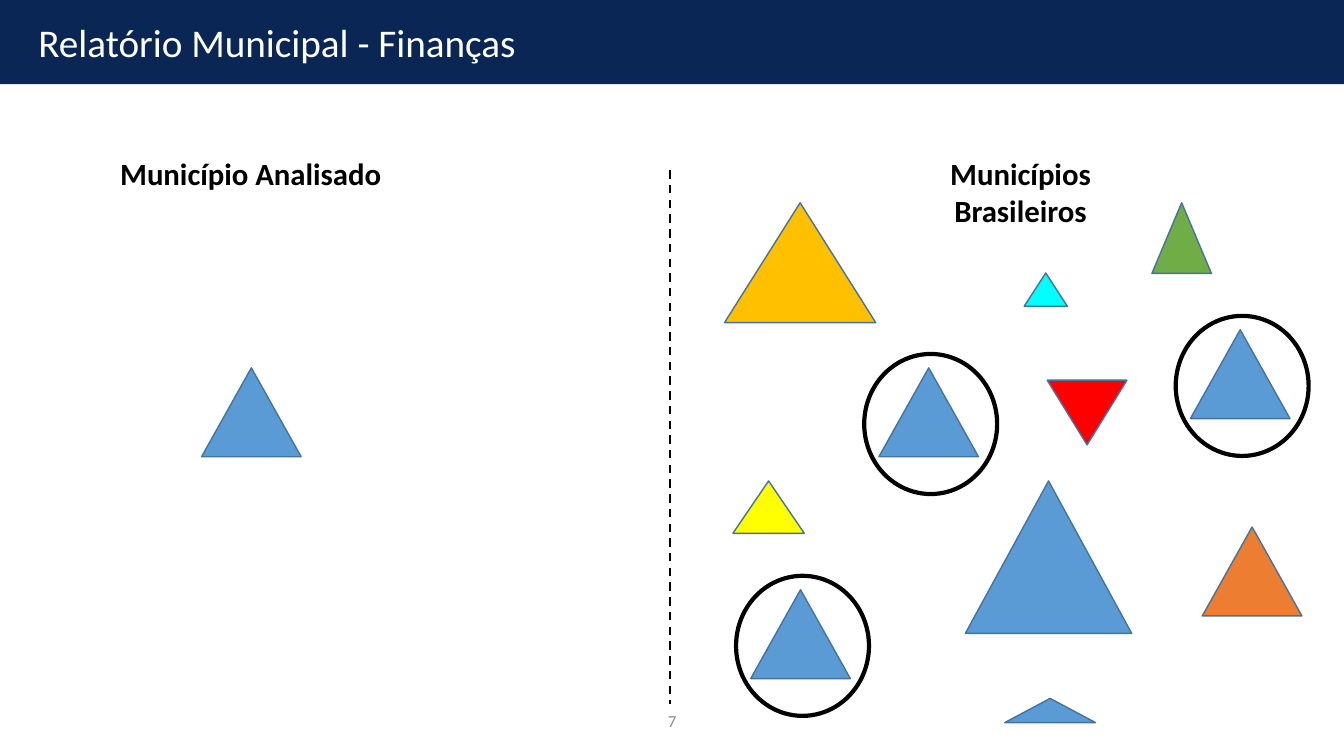
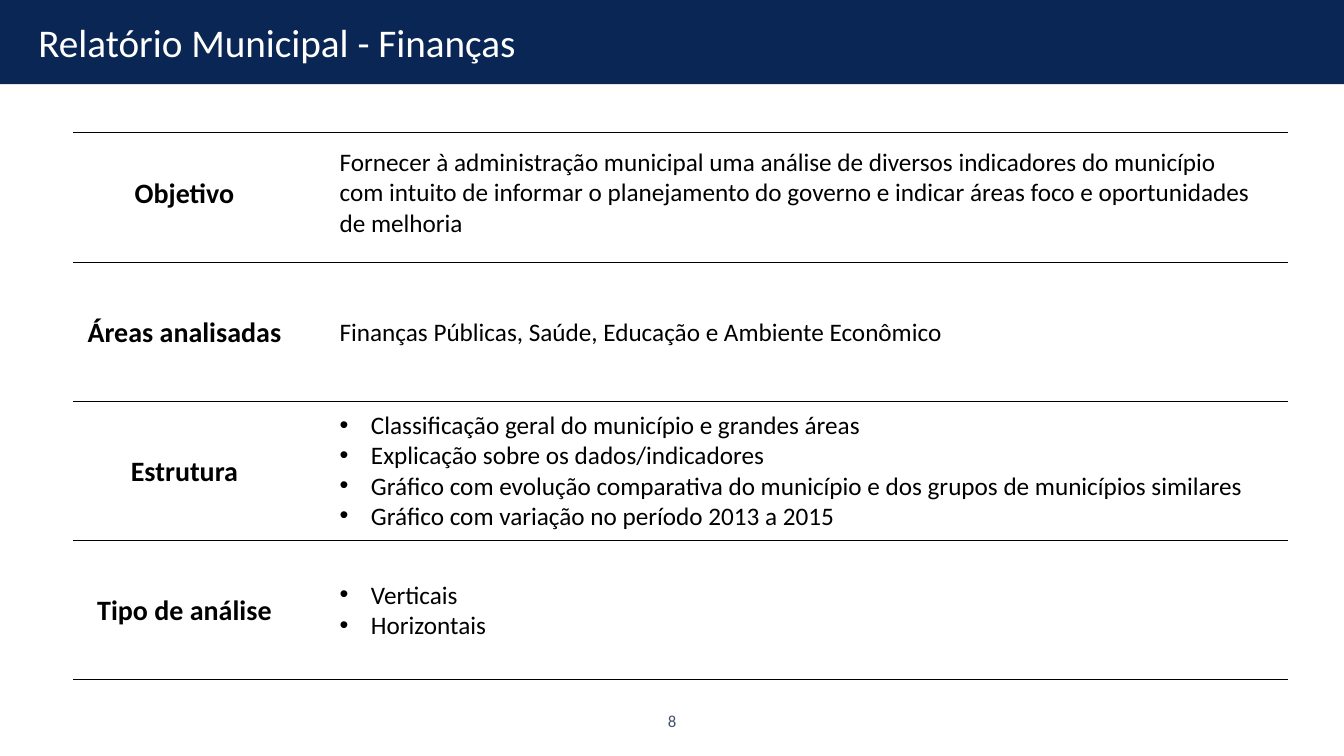
from dataclasses import dataclass

from lxml.etree import SubElement
from pptx import Presentation
from pptx.dml.color import RGBColor
from pptx.enum.dml import MSO_LINE
from pptx.enum.shapes import MSO_CONNECTOR, MSO_SHAPE
from pptx.enum.text import MSO_ANCHOR, MSO_AUTO_SIZE, PP_ALIGN
from pptx.oxml.ns import qn
from pptx.util import Cm, Pt


@dataclass(frozen=True)
class Theme:
    font: str = "Calibri"
    navy: str = "0A2654"
    white: str = "FFFFFF"
    black: str = "000000"
    grey: str = "8C8C8C"
    slate: str = "44546A"
    blue: str = "5B9BD5"
    outline: str = "43739E"
    gold: str = "FFC000"
    orange: str = "ED7D31"
    yellow: str = "FFFF00"
    cyan: str = "00FFFF"
    red: str = "FF0000"
    green: str = "70AD47"
    title_size: int = 28
    heading_size: int = 22
    label_size: int = 20
    body_size: int = 18
    page_size: int = 12


THEME = Theme()
WIDTH, HEIGHT = 33.87, 19.05
BAND_HEIGHT = 2.12
TITLE = "Relatório Municipal - Finanças"

# Slide 7: heading and its centre
HEADINGS = [("Município Analisado", 6.32), ("Municípios Brasileiros", 25.72)]
# Municipalities of the analysed size: left, top
ANALYSED = (5.08, 9.27)
SIMILAR = [(22.15, 9.27), (18.92, 14.86), (30.0, 8.31)]
PEER_SIZE = (2.51, 2.24)
RING_SIZE = (3.35, 3.53)
RING_OFFSET = (0.37, 0.35)
# Other municipalities: left, top, width, height, colour, rotation
OTHERS = [
    (18.26, 5.11, 3.81, 3.02, THEME.gold, 0),
    (30.3, 13.28, *PEER_SIZE, THEME.orange, 0),
    (25.32, 17.6, 2.29, 0.61, THEME.blue, 0),
    (18.47, 12.12, 1.8, 1.32, THEME.yellow, 0),
    (25.81, 6.88, 1.09, 0.84, THEME.cyan, 0),
    (26.39, 9.58, 2.01, 1.63, THEME.red, 180),
    (24.33, 12.12, 4.19, 3.84, THEME.blue, 0),
    (29.03, 5.11, 1.5, 1.78, THEME.green, 0),
]

# Slide 8: label, paragraphs, bulleted, lines of text
ROWS = [
    ("Objetivo",
     ["Fornecer à administração municipal uma análise de diversos indicadores "
      "do município com intuito de informar o planejamento do governo e "
      "indicar áreas foco e oportunidades de melhoria"], False, 3),
    ("Áreas analisadas",
     ["Finanças Públicas, Saúde, Educação e Ambiente Econômico"], False, 1),
    ("Estrutura",
     ["Classificação geral do município e grandes áreas",
      "Explicação sobre os dados/indicadores",
      "Gráfico com evolução comparativa do município e dos grupos de "
      "municípios similares",
      "Gráfico com variação no período 2013 a 2015"], True, 4),
    ("Tipo de análise", ["Verticais", "Horizontais"], True, 2),
]
TABLE_TOP, FIRST_RULE, ROW_PITCH = 3.33, 6.6, 3.505
RULE_LEFT, RULE_RIGHT = 1.85, 32.46
LABEL_LEFT, LABEL_WIDTH, LABEL_HEIGHT = 1.93, 5.44, 1.12
BODY_LEFT, BODY_WIDTH = 8.31, 23.75
LINE_HEIGHT, BOX_PADDING = 0.77, 0.25
BULLET_INDENT = Cm(0.79)


def rgb(colour):
    return RGBColor.from_string(colour)


def add_bullet(paragraph):
    properties = paragraph._p.get_or_add_pPr()
    properties.set("marL", str(BULLET_INDENT))
    properties.set("indent", str(-BULLET_INDENT))
    SubElement(properties, qn("a:buFont")).set("typeface", "Arial")
    SubElement(properties, qn("a:buChar")).set("char", "•")


def add_text(slide, box, paragraphs, size, colour=THEME.black, bold=False,
             align=PP_ALIGN.LEFT, bulleted=False, wrap=True, grow=True,
             anchor=MSO_ANCHOR.TOP):
    frame = slide.shapes.add_textbox(*map(Cm, box)).text_frame
    frame.word_wrap = wrap
    frame.auto_size = (MSO_AUTO_SIZE.SHAPE_TO_FIT_TEXT if grow
                       else MSO_AUTO_SIZE.NONE)
    frame.vertical_anchor = anchor
    for index, wording in enumerate(paragraphs):
        paragraph = frame.add_paragraph() if index else frame.paragraphs[0]
        paragraph.alignment = align
        if bulleted:
            add_bullet(paragraph)
        run = paragraph.add_run()
        run.text = wording
        run.font.name = THEME.font
        run.font.size = Pt(size)
        run.font.bold = bold
        run.font.color.rgb = rgb(colour)
    return frame


def add_figure(slide, kind, box, fill=None, line=None, line_width=1):
    figure = slide.shapes.add_shape(kind, *map(Cm, box))
    figure.shadow.inherit = False
    if fill:
        figure.fill.solid()
        figure.fill.fore_color.rgb = rgb(fill)
    else:
        figure.fill.background()
    if line:
        figure.line.color.rgb = rgb(line)
        figure.line.width = Pt(line_width)
    else:
        figure.line.fill.background()
    return figure


def add_triangle(slide, box, fill, rotation=0):
    triangle = add_figure(slide, MSO_SHAPE.ISOSCELES_TRIANGLE, box, fill,
                          THEME.outline)
    triangle.rotation = rotation


def add_rule(slide, start, end, line_width):
    rule = slide.shapes.add_connector(MSO_CONNECTOR.STRAIGHT,
                                      *map(Cm, start + end))
    rule.line.color.rgb = rgb(THEME.black)
    rule.line.width = Pt(line_width)
    SubElement(rule._element.spPr, qn("a:effectLst"))
    return rule


def add_framed_slide(deck, page, page_colour):
    """Add a blank slide with the title band and page number."""
    slide = deck.slides.add_slide(deck.slide_layouts[6])
    add_figure(slide, MSO_SHAPE.RECTANGLE, (0, 0, WIDTH, BAND_HEIGHT),
               THEME.navy)
    title = add_text(slide, (0.46, 0.33, 32.94, 1.45), [TITLE],
                     THEME.title_size, THEME.white, anchor=MSO_ANCHOR.MIDDLE)
    title.margin_left = title.margin_right = Cm(0.51)
    add_text(slide, (13.13, 17.65, 7.62, 1.02), [str(page)], THEME.page_size,
             page_colour, align=PP_ALIGN.CENTER, grow=False,
             anchor=MSO_ANCHOR.MIDDLE)
    return slide


def add_comparison(deck):
    slide = add_framed_slide(deck, 7, THEME.grey)
    heading_width = 7.4
    for heading, centre in HEADINGS:
        add_text(slide, (centre - heading_width / 2, 3.78, heading_width, 1.2),
                 [heading], THEME.heading_size, bold=True,
                 align=PP_ALIGN.CENTER, wrap=False)
    divider = add_rule(slide, (16.89, 4.29), (16.89, 17.73), 1.5)
    divider.line.dash_style = MSO_LINE.DASH

    for *box, colour, rotation in OTHERS:
        add_triangle(slide, box, colour, rotation)
    for corner in [ANALYSED, *SIMILAR]:
        add_triangle(slide, corner + PEER_SIZE, THEME.blue)
    for left, top in SIMILAR:
        ring = (left - RING_OFFSET[0], top - RING_OFFSET[1], *RING_SIZE)
        add_figure(slide, MSO_SHAPE.OVAL, ring, line=THEME.black, line_width=3)


def add_summary(deck):
    slide = add_framed_slide(deck, 8, THEME.slate)
    row_bottoms = [FIRST_RULE + ROW_PITCH * row for row in range(len(ROWS))]
    for y in [TABLE_TOP, *row_bottoms]:
        add_rule(slide, (RULE_LEFT, y), (RULE_RIGHT, y), 0.5)

    for (label, paragraphs, bulleted, lines), bottom in zip(ROWS, row_bottoms):
        middle = bottom - ROW_PITCH / 2
        add_text(slide, (LABEL_LEFT, middle - LABEL_HEIGHT / 2, LABEL_WIDTH,
                         LABEL_HEIGHT),
                 [label], THEME.label_size, bold=True, align=PP_ALIGN.CENTER,
                 wrap=False)
        body_height = BOX_PADDING + LINE_HEIGHT * lines
        add_text(slide, (BODY_LEFT, middle - body_height / 2, BODY_WIDTH,
                         body_height),
                 paragraphs, THEME.body_size, bulleted=bulleted)


def main():
    deck = Presentation()
    deck.slide_width, deck.slide_height = Cm(WIDTH), Cm(HEIGHT)
    add_comparison(deck)
    add_summary(deck)
    deck.save("out.pptx")


if __name__ == "__main__":
    main()
